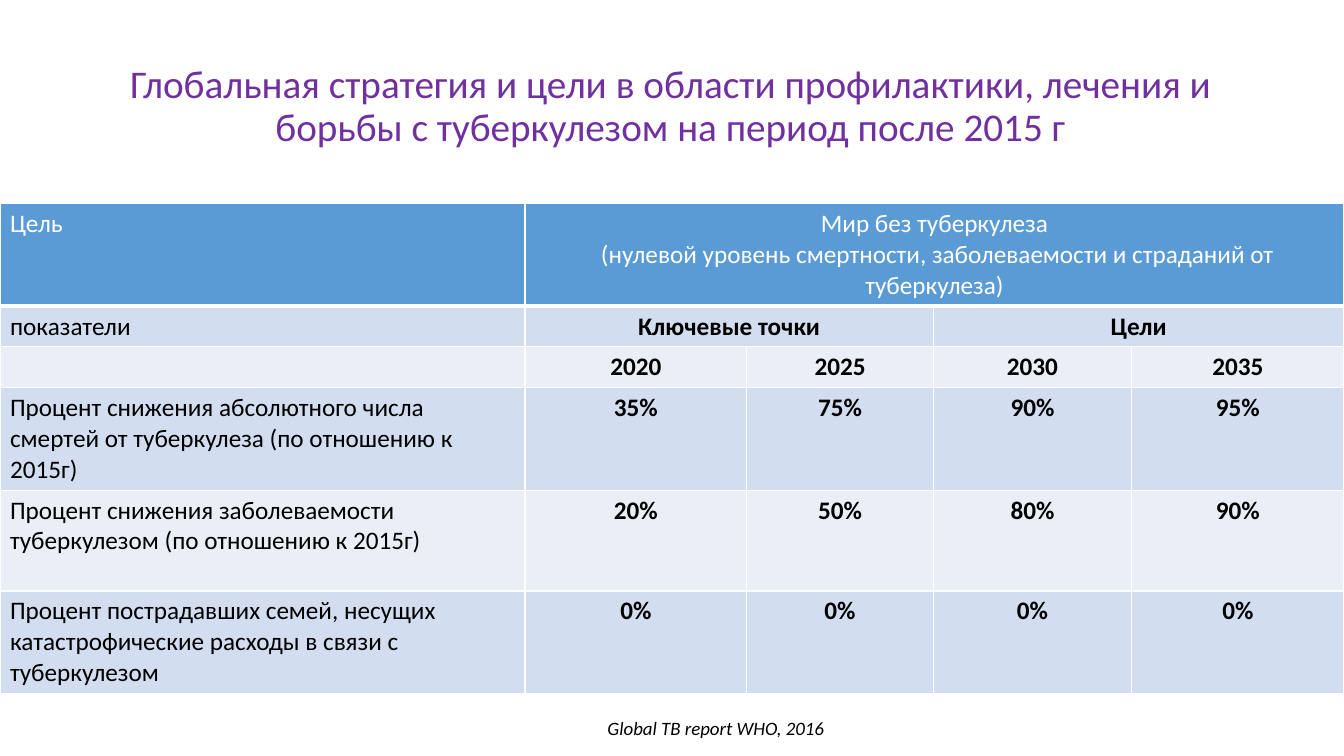
from dataclasses import dataclass

from lxml import etree
from pptx import Presentation
from pptx.dml.color import RGBColor
from pptx.enum.text import MSO_ANCHOR, MSO_AUTO_SIZE, PP_ALIGN
from pptx.oxml.ns import qn
from pptx.util import Cm, Pt

LEFT, CENTER = PP_ALIGN.LEFT, PP_ALIGN.CENTER
MIDDLE = MSO_ANCHOR.MIDDLE
NO_FIT = MSO_AUTO_SIZE.NONE


@dataclass(frozen=True)
class Theme:
    font: str = "Calibri"
    purple: str = "7030A0"
    white: str = "FFFFFF"
    black: str = "000000"
    header: str = "5B9BD5"
    bands: tuple = ("EAEFF7", "D2DEEF")
    title_size: float = 28
    body_size: float = 18
    source_size: float = 13.5


T = Theme()


def write(tf, text, size=T.body_size, color=T.black, bold=False, italic=False, align=LEFT):
    for i, line in enumerate(text.split("\n")):
        p = tf.add_paragraph() if i else tf.paragraphs[0]
        p.alignment = align
        r = p.add_run()
        r.text = line
        r.font.name = T.font
        r.font.size = Pt(size)
        r.font.bold = bold
        r.font.italic = italic
        r.font.color.rgb = RGBColor.from_string(color)


def set_borders(cell, header):
    tc_pr = cell._tc.get_or_add_tcPr()
    for side in "LRTB":
        width = Pt(3 if header and side == "B" else 1)
        ln = etree.SubElement(tc_pr, qn(f"a:ln{side}"), w=str(width))
        fill = etree.SubElement(ln, qn("a:solidFill"))
        etree.SubElement(fill, qn("a:srgbClr"), val=T.white)


prs = Presentation()
prs.slide_width, prs.slide_height = Cm(33.87), Cm(19.05)
s = prs.slides.add_slide(prs.slide_layouts[5])

title = s.shapes.title
title.left, title.top, title.width, title.height = Cm(2.29), Cm(1.32), Cm(29.21), Cm(2.77)
tf = title.text_frame
tf.auto_size = NO_FIT
tf.word_wrap = True
tf.vertical_anchor = MIDDLE
write(tf, "Глобальная стратегия и цели в области профилактики, лечения и борьбы с туберкулезом на период после 2015 г",
      size=T.title_size, color=T.purple, align=CENTER)
tf.paragraphs[0].line_spacing = 0.9

rows = [
    ["Цель", "Мир без туберкулеза\n (нулевой уровень смертности, заболеваемости и страданий от туберкулеза)", "", "", ""],
    ["показатели", "Ключевые точки", "", "Цели", ""],
    ["", "2020", "2025", "2030", "2035"],
    ["Процент снижения абсолютного числа смертей от туберкулеза (по отношению к 2015г)", "35%", "75%", "90%", "95%"],
    ["Процент снижения заболеваемости туберкулезом (по отношению к 2015г)", "20%", "50%", "80%", "90%"],
    ["Процент пострадавших семей, несущих катастрофические расходы в связи с туберкулезом", "0%", "0%", "0%", "0%"],
]
col_widths = [13.23, 5.59, 4.7, 5, 5.35]
row_heights = [2.5, 1, 1, 2.54, 2.54, 2.54]
merges = [(0, 1, 4), (1, 1, 2), (1, 3, 4)]

table = s.shapes.add_table(len(rows), len(col_widths), Cm(0), Cm(5.13),
                           Cm(sum(col_widths)), Cm(sum(row_heights))).table
for col, width in zip(table.columns, col_widths):
    col.width = Cm(width)
for row, height in zip(table.rows, row_heights):
    row.height = Cm(height)
for row, first, last in merges:
    table.cell(row, first).merge(table.cell(row, last))

for i, values in enumerate(rows):
    header = i == 0
    for j, text in enumerate(values):
        cell = table.cell(i, j)
        set_borders(cell, header)
        cell.fill.solid()
        cell.fill.fore_color.rgb = RGBColor.from_string(T.header if header else T.bands[i % 2])
        if text:
            write(cell.text_frame, text, color=T.white if header else T.black,
                  bold=not header and j > 0, align=CENTER if j else LEFT)

tf = s.shapes.add_textbox(Cm(15.06), Cm(17.93), Cm(15.09), Cm(0.84)).text_frame
tf.word_wrap = True
write(tf, "Global TB report WHO, 2016", size=T.source_size, italic=True)

prs.save("out.pptx")
